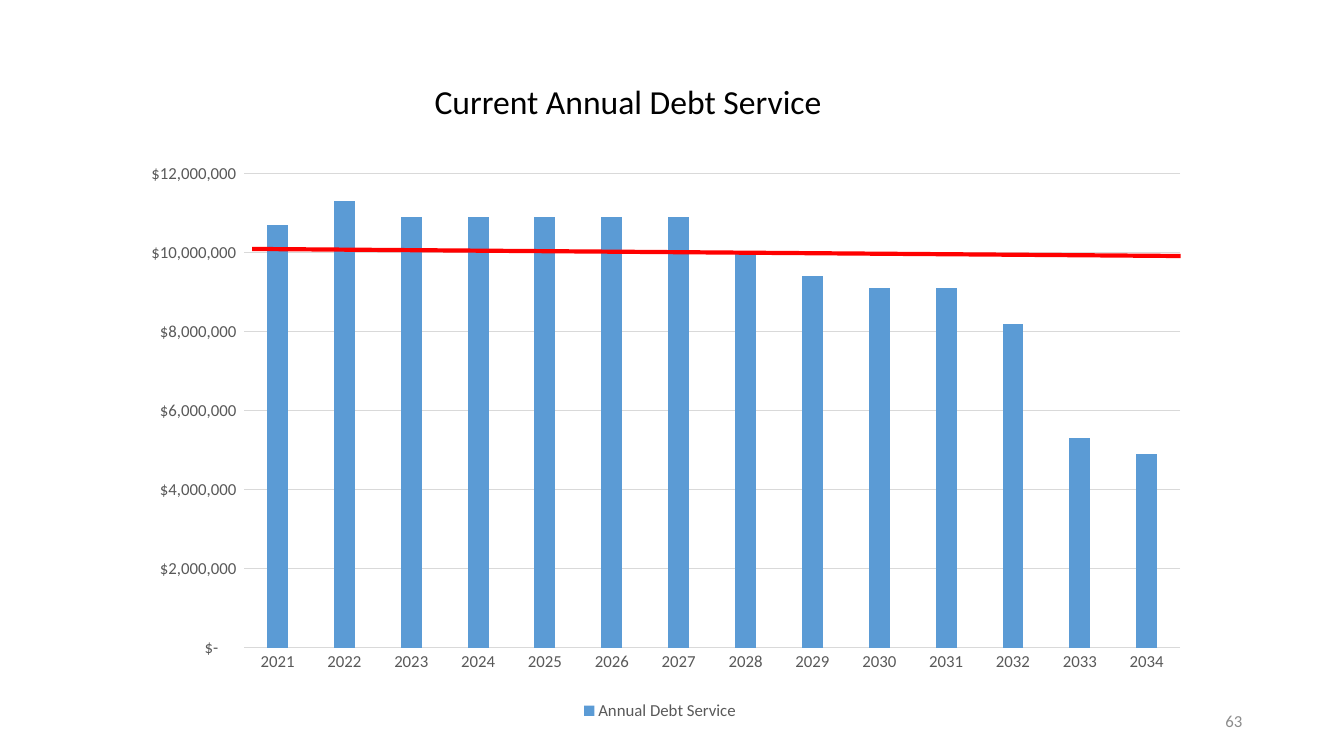
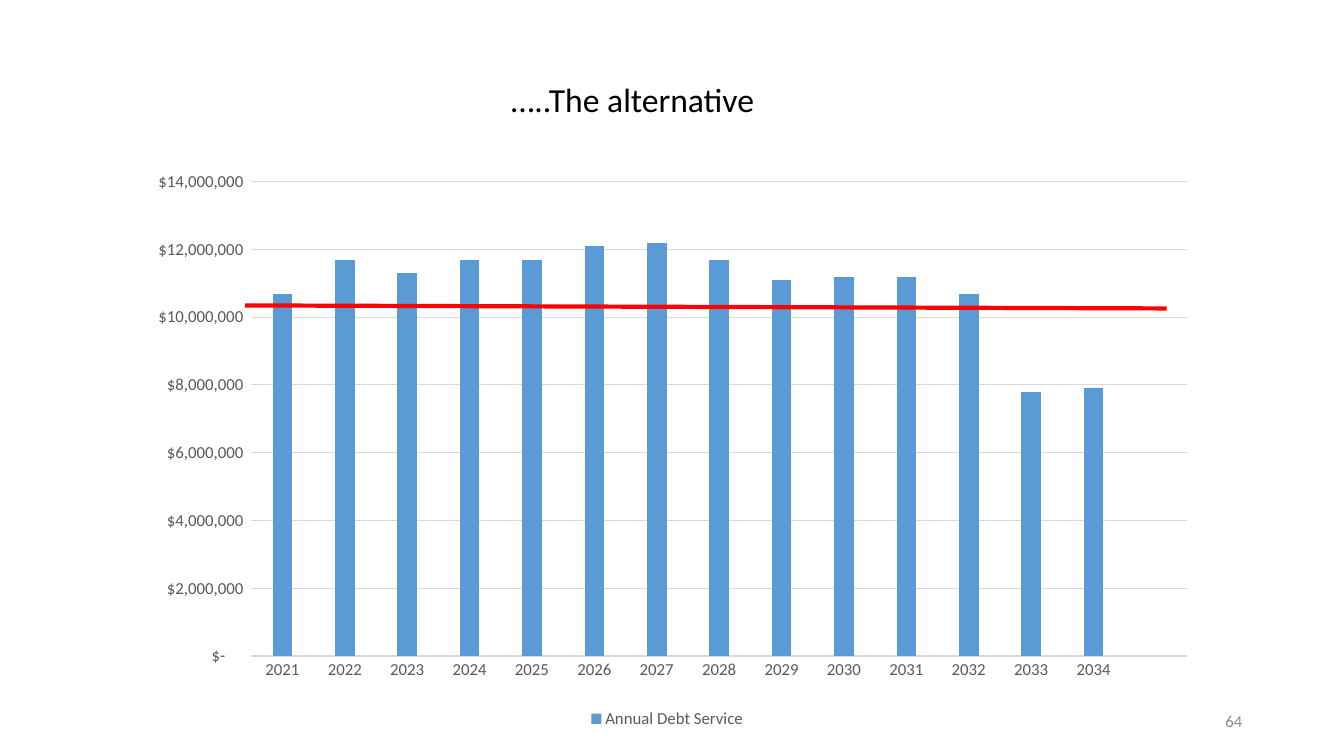
from lxml import etree
from pptx import Presentation
from pptx import util as u
from pptx.chart.data import CategoryChartData
from pptx.dml.color import RGBColor
from pptx.enum import chart as ch, shapes, text
from pptx.oxml import parse_xml
from pptx.oxml.ns import nsdecls, qn

BLACK = RGBColor(0x00, 0x00, 0x00)
GRAY = RGBColor(0x59, 0x59, 0x59)
PALE = RGBColor(0xD9, 0xD9, 0xD9)
MUTED = RGBColor(0x8C, 0x8C, 0x8C)
BLUE = RGBColor(0x5B, 0x9B, 0xD5)
RED = RGBColor(0xFF, 0x00, 0x00)

FONT = "Calibri"
MONEY = '_("$"* #,##0_);_("$"* \\(#,##0\\);_("$"* "-"??_);_(@_)'
SERIES = "Annual Debt Service"
YEARS = [str(year) for year in range(2021, 2035)]
STEP = 2_000_000
PLOT = {"x": 0.1, "y": 0.21, "w": 0.9, "h": 0.68}
CHART_SIZE = (1032, 692)
NUMBER_BOX = (942, 695, 300, 40)

# Boxes are left, top, width, height; values are in millions of dollars.
SLIDES = [
    {"title": "Current Annual Debt Service", "box": (421, 75, 425, 50),
     "chart": (139, 27), "cats": YEARS, "top": 12_000_000,
     "vals": [10.7, 11.3, 10.9, 10.9, 10.9, 10.9, 10.9,
              10.0, 9.4, 9.1, 9.1, 8.2, 5.3, 4.9],
     "limit": (250, 247, 1171, 254), "number": "63"},
    {"title": "…..The alternative", "box": (497, 73, 291, 50),
     "chart": (146, 35), "cats": YEARS + [""], "top": 14_000_000,
     "vals": [10.7, 11.7, 11.3, 11.7, 11.7, 12.1, 12.2,
              11.7, 11.1, 11.2, 11.2, 10.7, 7.8, 7.9, None],
     "limit": (243, 303, 1157, 306), "number": "64"},
]


def px(*nums):
    """Turn px, 100 to the inch, into EMU."""
    return [u.Emu(num * 9144) for num in nums]


def style(font, size, color):
    font.name, font.size, font.bold = FONT, u.Pt(size), False
    font.color.rgb = color


def write(shape, words, box, size=12, color=BLACK,
          align=text.PP_ALIGN.LEFT, anchor=text.MSO_ANCHOR.TOP):
    shape.left, shape.top, shape.width, shape.height = px(*box)
    frame = shape.text_frame
    frame.text = words
    frame.word_wrap = True
    frame.auto_size = text.MSO_AUTO_SIZE.NONE
    frame.vertical_anchor = anchor
    para = frame.paragraphs[0]
    para.alignment = align
    style(para.runs[0].font, size, color)


def rule(line, color, width):
    line.color.rgb = color
    line.width = u.Pt(width)


def set_plot(chart):
    """Fix the inner plot area as shares of the chart."""
    area = chart._chartSpace.chart.plotArea
    for old in area.findall(qn("c:layout")):
        area.remove(old)
    sides = "".join(f'<c:{key} val="{val}"/>' for key, val in PLOT.items())
    area.insert(0, parse_xml(
        f'<c:layout {nsdecls("c")}><c:manualLayout>'
        '<c:layoutTarget val="inner"/><c:xMode val="edge"/>'
        f'<c:yMode val="edge"/>{sides}</c:manualLayout></c:layout>'))


def add_bars(slide, item):
    data = CategoryChartData(number_format=MONEY)
    data.categories = item["cats"]
    data.add_series(SERIES, [None if val is None else round(val * 1_000_000)
                             for val in item["vals"]])
    chart = slide.shapes.add_chart(
        ch.XL_CHART_TYPE.COLUMN_CLUSTERED,
        *px(*item["chart"], *CHART_SIZE), data).chart
    style(chart.font, 12, GRAY)
    chart.has_title = False
    chart.has_legend = True
    chart.legend.position = ch.XL_LEGEND_POSITION.BOTTOM
    chart.legend.include_in_layout = False
    style(chart.legend.font, 12, GRAY)

    plot = chart.plots[0]
    plot.gap_width, plot.overlap = 219, -27
    plot.vary_by_categories = False
    fill = plot.series[0].format.fill
    fill.solid()
    fill.fore_color.rgb = BLUE

    years, money = chart.category_axis, chart.value_axis
    for axis in (years, money):
        axis.major_tick_mark = axis.minor_tick_mark = ch.XL_TICK_MARK.NONE
        style(axis.tick_labels.font, 12, GRAY)
    rule(years.format.line, PALE, 0.75)
    money.format.line.fill.background()
    rule(money.major_gridlines.format.line, PALE, 0.75)
    money.minimum_scale, money.maximum_scale = 0, item["top"]
    money.major_unit = STEP
    money.tick_labels.number_format = MONEY
    money.tick_labels.number_format_is_linked = False
    set_plot(chart)


def add_limit(slide, ends):
    line = slide.shapes.add_connector(shapes.MSO_CONNECTOR.STRAIGHT, *px(*ends))
    rule(line.line, RED, 3)
    etree.SubElement(line._element.spPr, qn("a:effectLst"))


def build(deck, item):
    slide = deck.slides.add_slide(deck.slide_layouts[5])
    add_bars(slide, item)
    title = slide.shapes.title
    write(title, item["title"], item["box"], size=24)
    slide.shapes._spTree.append(title._element)  # in front of the chart
    add_limit(slide, item["limit"])
    number = slide.shapes.add_textbox(*px(*NUMBER_BOX))
    write(number, item["number"], NUMBER_BOX, color=MUTED,
          align=text.PP_ALIGN.RIGHT, anchor=text.MSO_ANCHOR.MIDDLE)


def main():
    deck = Presentation()
    deck.slide_width, deck.slide_height = px(1333, 750)
    for item in SLIDES:
        build(deck, item)
    deck.save("out.pptx")


if __name__ == "__main__":
    main()
